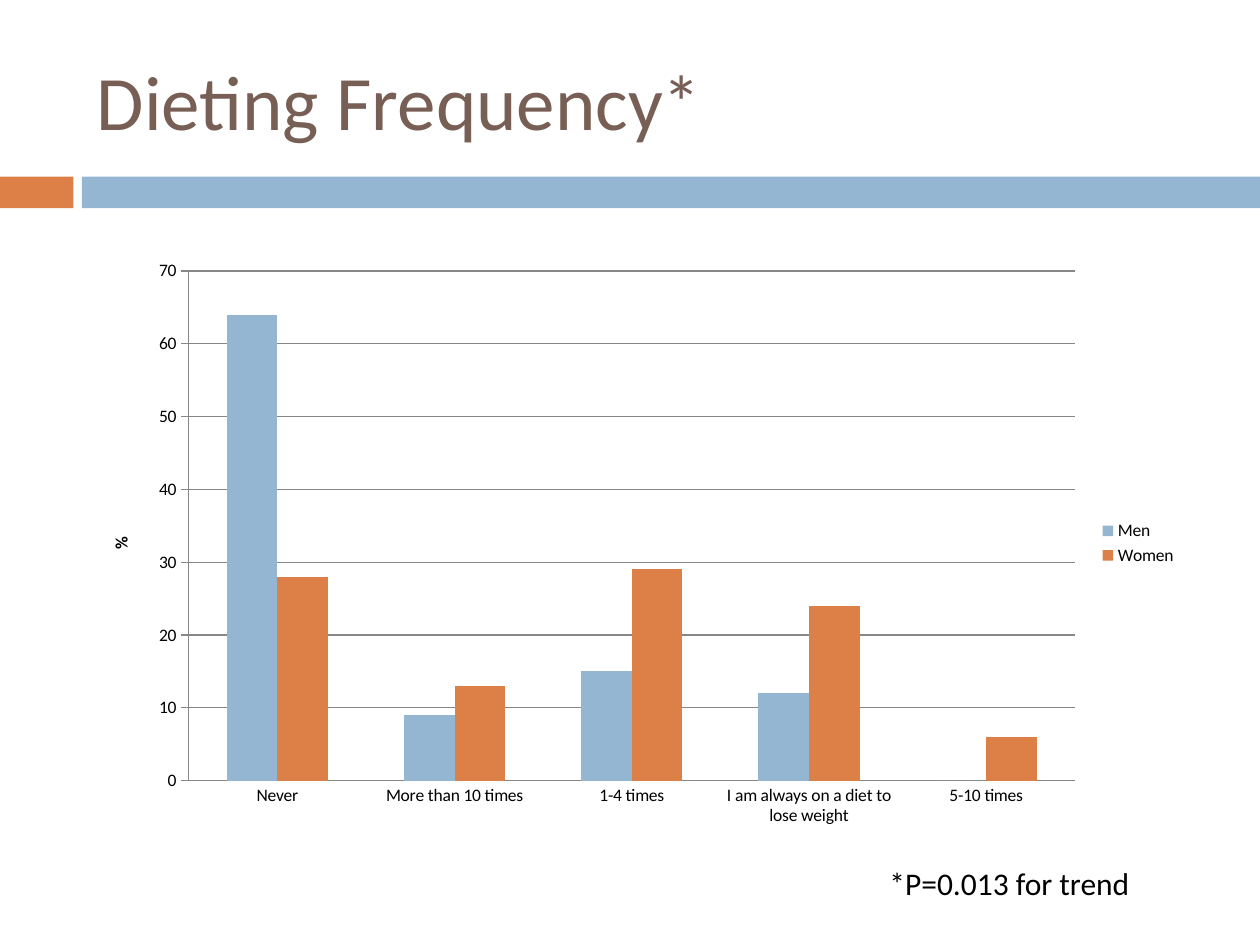
import pptx
import pptx.chart.data
import pptx.dml.color
import pptx.enum.chart
import pptx.enum.shapes
import pptx.enum.text
import pptx.util

Cm = pptx.util.Cm
Pt = pptx.util.Pt
RGBColor = pptx.dml.color.RGBColor
Tick = pptx.enum.chart.XL_TICK_MARK
Anchor = pptx.enum.text.MSO_ANCHOR
AutoSize = pptx.enum.text.MSO_AUTO_SIZE

ORANGE = RGBColor(0xDD, 0x80, 0x47)
BLUE = RGBColor(0x94, 0xB6, 0xD2)
BROWN = RGBColor(0x77, 0x5F, 0x55)
BLACK = RGBColor(0, 0, 0)
GRAY = RGBColor(0x87, 0x87, 0x87)


def apply_format(target, values):
    for name, value in values.items():
        setattr(target, name, value)


class SlideBuilder:
    font_name = "Calibri"

    def __init__(self, slide):
        self.slide = slide

    def style_font(self, font, size, color, bold=False):
        apply_format(font, {"name": self.font_name, "size": Pt(size), "bold": bold})
        font.color.rgb = color

    def band(self, left, top, width, height, color):
        band = self.slide.shapes.add_shape(
            pptx.enum.shapes.MSO_SHAPE.RECTANGLE,
            Cm(left), Cm(top), Cm(width), Cm(height))
        band.shadow.inherit = False
        band.fill.solid()
        band.fill.fore_color.rgb = color
        band.line.fill.background()

    def text(self, words, left, top, width, height, size, color, frame_format):
        frame = self.slide.shapes.add_textbox(
            Cm(left), Cm(top), Cm(width), Cm(height)).text_frame
        apply_format(frame, frame_format)
        run = frame.paragraphs[0].add_run()
        run.text = words
        self.style_font(run.font, size, color)

    def column_chart(self, left, top, width, height, categories, groups, unit):
        data = pptx.chart.data.CategoryChartData()
        data.categories = categories
        for name, values, _ in groups:
            data.add_series(name, values)
        chart = self.slide.shapes.add_chart(
            pptx.enum.chart.XL_CHART_TYPE.COLUMN_CLUSTERED,
            Cm(left), Cm(top), Cm(width), Cm(height), data).chart
        self.style_font(chart.font, 10, BLACK)
        apply_format(chart, {"has_title": False, "has_legend": True})
        apply_format(chart.legend, {
            "position": pptx.enum.chart.XL_LEGEND_POSITION.RIGHT,
            "include_in_layout": False,
        })

        plot = chart.plots[0]
        apply_format(plot, {"gap_width": 150, "overlap": 0, "vary_by_categories": False})
        for series, (_, _, color) in zip(plot.series, groups):
            series.format.fill.solid()
            series.format.fill.fore_color.rgb = color

        frequency_axis, percent_axis = chart.category_axis, chart.value_axis
        apply_format(frequency_axis, {
            "major_tick_mark": Tick.NONE,
            "minor_tick_mark": Tick.NONE,
            "has_major_gridlines": False,
        })
        apply_format(percent_axis, {
            "major_tick_mark": Tick.OUTSIDE,
            "minor_tick_mark": Tick.NONE,
            "has_major_gridlines": True,
            "minimum_scale": 0,
            "maximum_scale": 70,
            "major_unit": 10,
        })
        for ruled in (frequency_axis, percent_axis, percent_axis.major_gridlines):
            ruled.format.line.color.rgb = GRAY
            ruled.format.line.width = Pt(0.75)

        unit_run = percent_axis.axis_title.text_frame.paragraphs[0].add_run()
        unit_run.text = unit
        self.style_font(unit_run.font, 10, BLACK, bold=True)


def main():
    deck = pptx.Presentation()
    apply_format(deck, {"slide_width": Cm(25.4), "slide_height": Cm(19.05)})
    builder = SlideBuilder(deck.slides.add_slide(deck.slide_layouts[6]))

    builder.band(0, 3.56, 1.48, 0.64, ORANGE)
    builder.band(1.65, 3.56, 23.75, 0.64, BLUE)
    builder.text("Dieting Frequency*", 1.7, 0.64, 22.66, 2.74, 44, BROWN,
                 {"word_wrap": True, "vertical_anchor": Anchor.MIDDLE})
    builder.column_chart(
        1.7, 5.03, 22.28, 11.84,
        ["Never", "More than 10 times", "1-4 times",
         "I am always on a diet to lose weight", "5-10 times"],
        [("Men", (64, 9, 15, 12, 0), BLUE),
         ("Women", (28, 13, 29, 24, 6), ORANGE)],
        "%")
    builder.text("*P=0.013 for trend", 17.68, 17.3, 5.54, 1.02, 18, BLACK,
                 {"word_wrap": False, "auto_size": AutoSize.SHAPE_TO_FIT_TEXT})
    deck.save("out.pptx")


if __name__ == "__main__":
    main()
